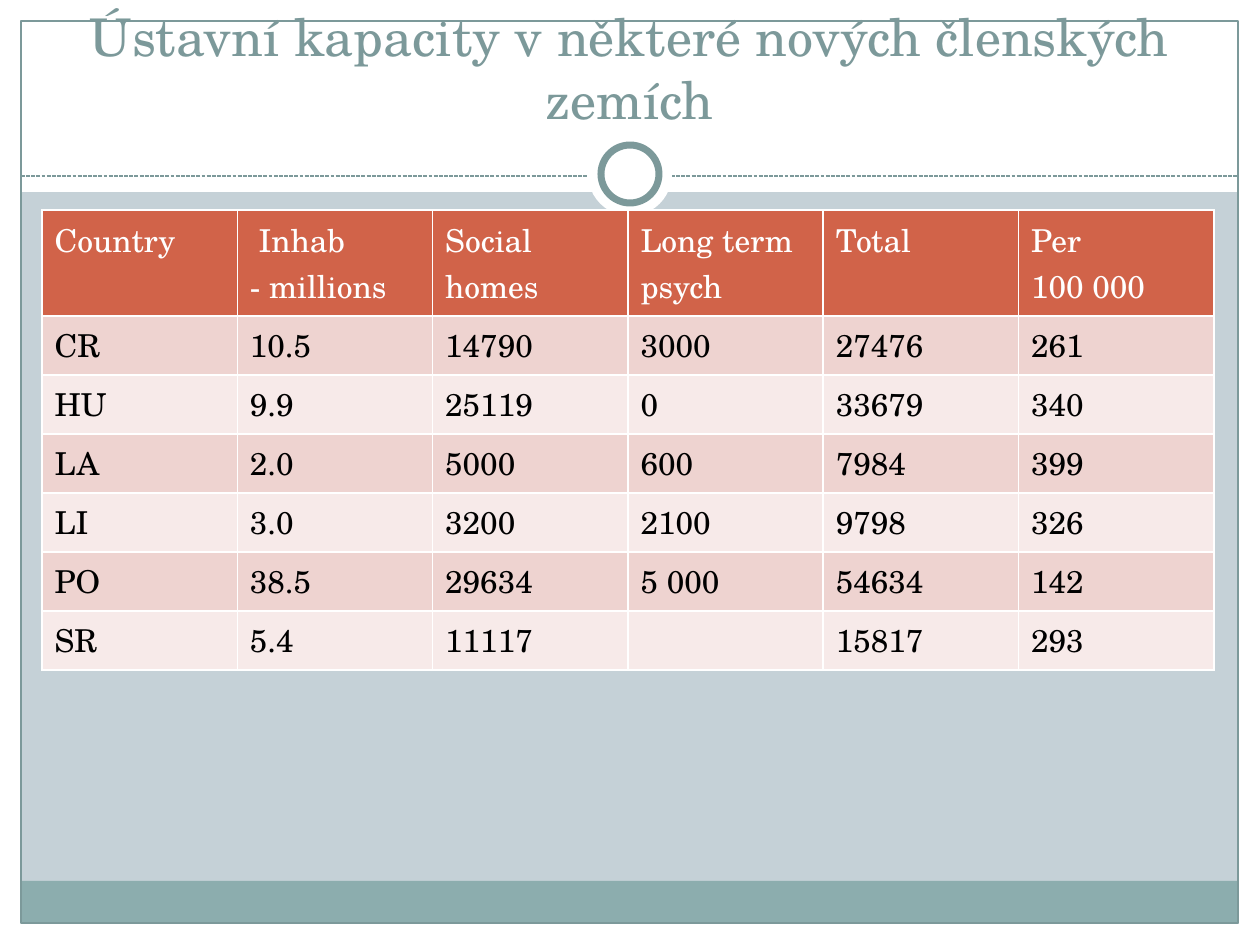
from lxml.etree import SubElement
from pptx import Presentation
from pptx.dml.color import RGBColor
from pptx.enum.dml import MSO_LINE
from pptx.enum.shapes import MSO_CONNECTOR as CONN, MSO_SHAPE as SHAPE
from pptx.enum.text import MSO_ANCHOR as ANCHOR, PP_ALIGN as ALIGN
from pptx.oxml.ns import qn
from pptx.util import Pt

PX = 914400 // 126
WHITE = RGBColor(0xFF, 0xFF, 0xFF)
BLACK = RGBColor(0x00, 0x00, 0x00)
BACKGROUND = RGBColor(0xC5, 0xD1, 0xD7)
SAGE = RGBColor(0x7C, 0x99, 0x9A)
TEAL = RGBColor(0x8C, 0xAD, 0xAE)
RUST = RGBColor(0xD1, 0x63, 0x49)
BANDS = RGBColor(0xEE, 0xD3, 0xD0), RGBColor(0xF7, 0xEA, 0xE9)

TITLE = "Ústavní kapacity v některé nových členských zemích"
ROWS = [
    ["Country", " Inhab\n- millions", "Social homes", "Long term\npsych", "Total", "Per\n100 000"],
    ["CR", "10.5", "14790", "3000", "27476", "261"],
    ["HU", "9.9", "25119", "0", "33679", "340"],
    ["LA", "2.0", "5000", "600", "7984", "399"],
    ["LI", "3.0", "3200", "2100", "9798", "326"],
    ["PO", "38.5", "29634", "5 000", "54634", "142"],
    ["SR", "5.4", "11117", "", "15817", "293"],
]


class Deck:
    font = "TeX Gyre Schola"

    def __init__(self, width, height):
        self.prs = Presentation()
        self.prs.slide_width = width * PX
        self.prs.slide_height = height * PX
        self.slide = self.prs.slides.add_slide(self.prs.slide_layouts[6])
        fill = self.slide.background.fill
        fill.solid()
        fill.fore_color.rgb = BACKGROUND

    def shape(self, kind, box, fill=None, line=None, weight=0.75):
        sp = self.slide.shapes.add_shape(kind, *(v * PX for v in box))
        sp.shadow.inherit = False
        if fill is None:
            sp.fill.background()
        else:
            sp.fill.solid()
            sp.fill.fore_color.rgb = fill
        if line is None:
            sp.line.fill.background()
        else:
            sp.line.color.rgb = line
            sp.line.width = Pt(weight)

    def dashed_line(self, x1, y1, x2, y2, color):
        cn = self.slide.shapes.add_connector(CONN.STRAIGHT, x1 * PX, y1 * PX, x2 * PX, y2 * PX)
        cn.line.color.rgb = color
        cn.line.width = Pt(0.75)
        cn.line.dash_style = MSO_LINE.SQUARE_DOT
        SubElement(cn._element.spPr, qn("a:effectLst"))

    def style(self, tf, size, color):
        for p in tf.paragraphs:
            p.font.name = self.font
            p.font.size = Pt(size)
            p.font.color.rgb = color

    def title(self, text, box, size, color):
        tf = self.slide.shapes.add_textbox(*(v * PX for v in box)).text_frame
        tf.word_wrap = True
        tf.vertical_anchor = ANCHOR.BOTTOM
        tf.text = text
        tf.paragraphs[0].alignment = ALIGN.CENTER
        self.style(tf, size, color)

    def border(self, cell):
        tc_pr = cell._tc.get_or_add_tcPr()
        for i, side in enumerate(("lnL", "lnR", "lnT", "lnB")):
            ln = tc_pr.makeelement(qn(f"a:{side}"), {"w": str(Pt(1))})
            tc_pr.insert(i, ln)
            fill = SubElement(ln, qn("a:solidFill"))
            SubElement(fill, qn("a:srgbClr"), val=str(WHITE))

    def table(self, rows, x, y, width, header_height, row_height):
        n, m = len(rows), len(rows[0])
        height = header_height + (n - 1) * row_height
        table = self.slide.shapes.add_table(
            n, m, x * PX, y * PX, width * PX, height * PX).table
        for i, row in enumerate(rows):
            header = i == 0
            table.rows[i].height = (header_height if header else row_height) * PX
            for j, text in enumerate(row):
                cell = table.cell(i, j)
                cell.text = text
                cell.fill.solid()
                cell.fill.fore_color.rgb = RUST if header else BANDS[(i - 1) % 2]
                self.style(cell.text_frame, 18, WHITE if header else BLACK)
                self.border(cell)


def main():
    deck = Deck(1260, 945)
    for box in [(0, 924, 1260, 21), (0, 0, 1260, 192), (0, 0, 21, 945), (1239, 0, 21, 945)]:
        deck.shape(SHAPE.RECTANGLE, box, WHITE)
    deck.shape(SHAPE.RECTANGLE, (21, 881, 1217, 43), TEAL)
    deck.shape(SHAPE.RECTANGLE, (21, 21, 1217, 902), line=SAGE)
    deck.dashed_line(21, 176, 1239, 176, SAGE)
    deck.shape(SHAPE.OVAL, (588, 132, 84, 84), WHITE)
    deck.shape(SHAPE.OVAL, (601, 145, 58, 58), WHITE, SAGE, 4)
    deck.title(TITLE, (42, 31, 1176, 105), 29.7, SAGE)
    deck.table(ROWS, 42, 210, 1172, 106, 59)
    deck.prs.save("out.pptx")


if __name__ == "__main__":
    main()
